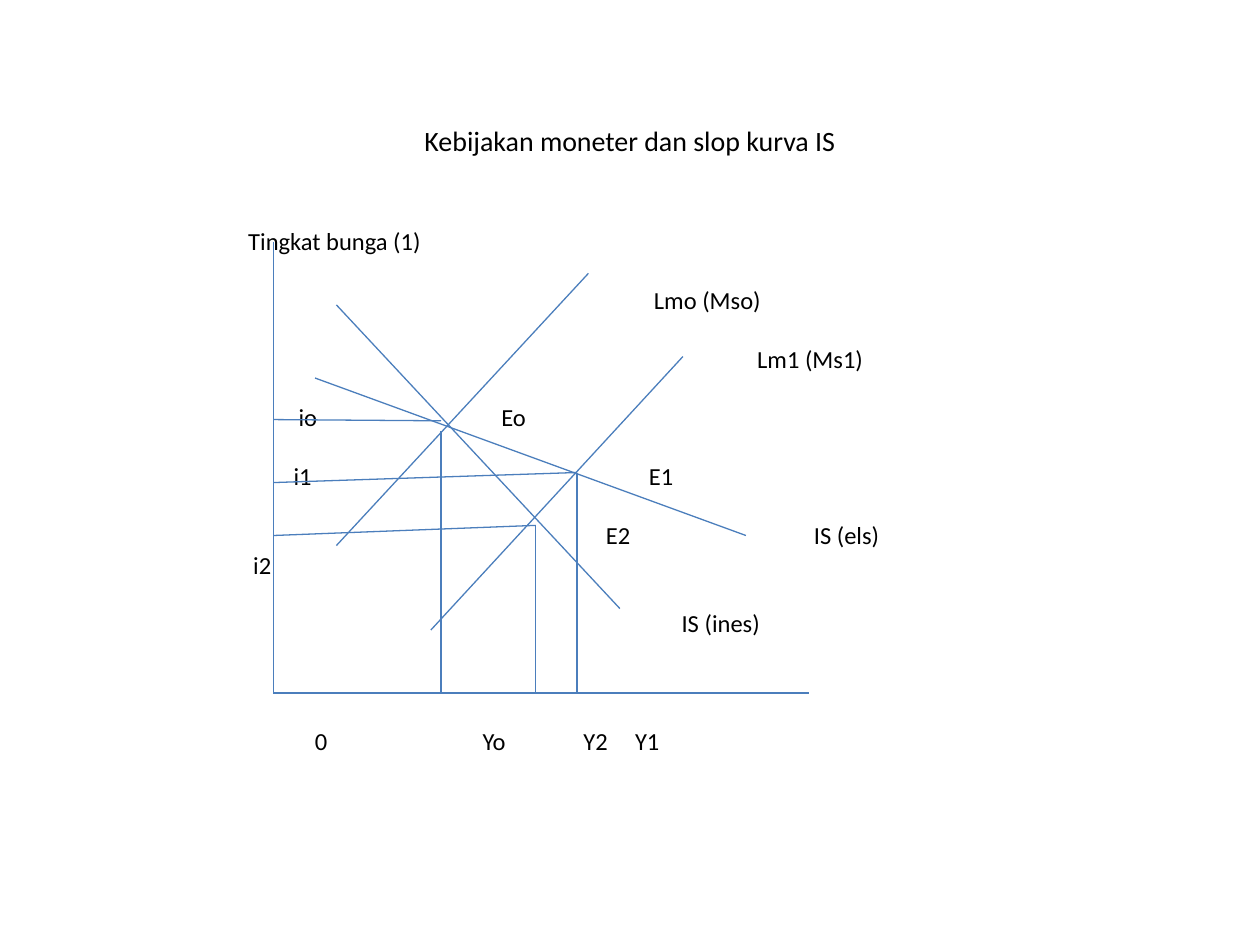
from pptx import Presentation
from pptx.dml.color import RGBColor
from pptx.enum.shapes import MSO_CONNECTOR
from pptx.enum.text import MSO_ANCHOR, PP_ALIGN
from pptx.oxml.ns import qn
from pptx.util import Inches, Pt
from lxml import etree

STRAIGHT = MSO_CONNECTOR.STRAIGHT
MIDDLE = MSO_ANCHOR.MIDDLE
LEFT, CENTER = PP_ALIGN.LEFT, PP_ALIGN.CENTER

LINE_COLOR = "4B7EBC"
TEXT_COLOR = "000000"
FONT = "Calibri"

ORIGIN_X, ORIGIN_Y = 2.17, 5.5
AXES = [
    ((ORIGIN_X, 1.92), (ORIGIN_X, ORIGIN_Y)),
    ((6.42, ORIGIN_Y), (ORIGIN_X, ORIGIN_Y)),
]
CURVES = [
    ((2.67, 4.33), (4.67, 2.17)),
    ((3.42, 5), (5.42, 2.83)),
    ((2.67, 2.42), (4.92, 4.83)),
    ((2.5, 3), (5.92, 4.25)),
]
# x, y at the curve, y at the interest axis, top of the income line
EQUILIBRIA = [
    (3.5, 3.34, 3.33, 3.42),
    (4.58, 3.75, 3.83, 3.75),
    (4.25, 4.17, 4.25, 4.17),
]

FIRST_ROW, ROW_STEP = 1.91, 0.2335
LABELS = [
    ("Tingkat bunga (1)", 1.97, 0),
    ("Lmo (Mso)", 5.19, 2),
    ("Lm1 (Ms1)", 6.01, 4),
    ("io", 2.37, 6),
    ("Eo", 3.98, 6),
    ("i1", 2.33, 8),
    ("E1", 5.15, 8),
    ("E2", 4.81, 10),
    ("IS (els)", 6.46, 10),
    ("i2", 2.01, 11),
    ("IS (ines)", 5.41, 13),
    ("0", 2.5, 17),
    ("Yo", 3.83, 17),
    ("Y2", 4.63, 17),
    ("Y1", 5.04, 17),
]


def color(value):
    return RGBColor.from_string(value)


def set_all(target, values):
    for name, value in values.items():
        setattr(target, name, value)


def add_text(page, text, left, middle, width, size, align=LEFT):
    height = 0.3
    box = page.shapes.add_textbox(
        Inches(left), Inches(middle - height / 2), Inches(width), Inches(height)
    )
    frame = box.text_frame
    set_all(frame, {
        "word_wrap": True, "vertical_anchor": MIDDLE,
        "margin_left": 0, "margin_right": 0, "margin_top": 0, "margin_bottom": 0,
    })
    para = frame.paragraphs[0]
    para.alignment = align
    span = para.add_run()
    span.text = text
    set_all(span.font, {"name": FONT, "size": Pt(size)})
    span.font.color.rgb = color(TEXT_COLOR)


def add_line(page, start, end):
    points = [Inches(value) for value in (*start, *end)]
    line = page.shapes.add_connector(STRAIGHT, *points)
    line.line.color.rgb = color(LINE_COLOR)
    line.line.width = Pt(0.75)
    etree.SubElement(line._element.spPr, qn("a:effectLst"))


def add_equilibrium(page, x, curve_y, axis_y, top):
    add_line(page, (x, curve_y), (ORIGIN_X, axis_y))
    add_line(page, (x, top), (x, ORIGIN_Y))


def main():
    deck = Presentation()
    set_all(deck, {"slide_width": Inches(10), "slide_height": Inches(7.5)})
    page = deck.slides.add_slide(deck.slide_layouts[6])
    add_text(page, "Kebijakan moneter dan slop kurva IS", 0.5, 1.11, 9, 16, CENTER)
    for text, left, row in LABELS:
        width = 0.2 + 0.1 * len(text)
        add_text(page, text, left, FIRST_ROW + row * ROW_STEP, width, 14)
    for start, end in AXES + CURVES:
        add_line(page, start, end)
    for equilibrium in EQUILIBRIA:
        add_equilibrium(page, *equilibrium)
    deck.save("out.pptx")


if __name__ == "__main__":
    main()
